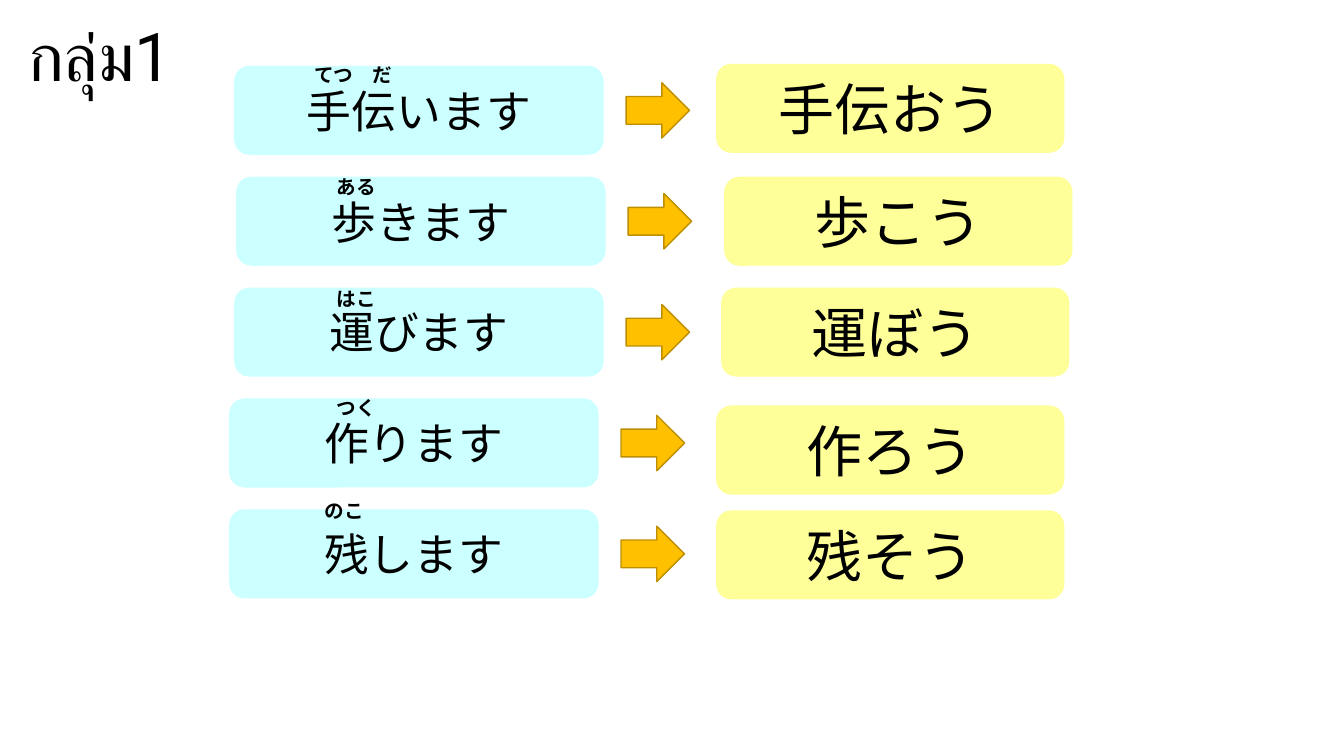
import pptx
import pptx.dml.color
import pptx.enum.shapes
import pptx.enum.text
import pptx.util

Inches = pptx.util.Inches
Pt = pptx.util.Pt
MSO_SHAPE = pptx.enum.shapes.MSO_SHAPE
PP_ALIGN = pptx.enum.text.PP_ALIGN
MSO_ANCHOR = pptx.enum.text.MSO_ANCHOR

BLUE, YELLOW = "CCFFFF", "FFFF99"
ORANGE, BROWN, BLACK = "FFC000", "BD8E00", "000000"

ROW_TOP, ROW_PITCH = 0.66, 1.1
CARD_H = 0.87
POLITE_W, VOLITIONAL_W = 3.65, 3.44
ARROW_DX, ARROW_DY = 3.88, 0.16

# polite form, its left; volitional form, its left and top; reading, its left and top
VERBS = [
    ("手伝います", 2.33, "手伝おう", 7.11, 0.64, "てつ　だ", 3.02, 0.58),
    ("歩きます", 2.35, "歩こう", 7.19, 1.76, "ある", 3.24, 1.69),
    ("運びます", 2.33, "運ぼう", 7.16, 2.86, "はこ", 3.24, 2.80),
    ("作ります", 2.28, "作ろう", 7.11, 4.03, "つく", 3.24, 3.88),
    ("残します", 2.28, "残そう", 7.11, 5.07, "のこ", 3.12, 4.90),
]


def rgb(value):
    return pptx.dml.color.RGBColor.from_string(value)


class VerbSlide:
    """Draws the cards, arrows and labels of one slide."""

    def __init__(self, prs):
        self.s = prs.slides.add_slide(prs.slide_layouts[6])

    def add_text(self, tf, text, size, font, bold=False):
        tf.word_wrap = True
        p = tf.paragraphs[0]
        r = p.add_run()
        r.text = text
        r.font.size = Pt(size)
        r.font.name = font
        r.font.bold = bold
        r.font.color.rgb = rgb(BLACK)
        return p

    def shape(self, kind, x, y, w, h, fill, line):
        sp = self.s.shapes.add_shape(kind, Inches(x), Inches(y), Inches(w), Inches(h))
        sp.shadow.inherit = False
        sp.fill.solid()
        sp.fill.fore_color.rgb = rgb(fill)
        sp.line.color.rgb = rgb(line)
        sp.line.width = Pt(1)
        return sp

    def card(self, text, x, y, w, color, size):
        sp = self.shape(MSO_SHAPE.ROUNDED_RECTANGLE, x, y, w, CARD_H, color, color)
        tf = sp.text_frame
        tf.vertical_anchor = MSO_ANCHOR.MIDDLE
        self.add_text(tf, text, size, "Lato").alignment = PP_ALIGN.CENTER

    def arrow(self, x, y):
        self.shape(MSO_SHAPE.RIGHT_ARROW, x, y, 0.63, 0.55, ORANGE, BROWN)

    def label(self, text, x, y, w, h, size, font, bold=False):
        sp = self.s.shapes.add_textbox(Inches(x), Inches(y), Inches(w), Inches(h))
        self.add_text(sp.text_frame, text, size, font, bold)


def main():
    prs = pptx.Presentation()
    prs.slide_width = Inches(13.33)
    prs.slide_height = Inches(7.5)
    slide = VerbSlide(prs)

    slide.label("กลุ่ม1", 0.18, 0.09, 3.29, 0.91, 48, "Roboto")
    for i, (polite, x, volitional, vx, vy, reading, rx, ry) in enumerate(VERBS):
        y = ROW_TOP + i * ROW_PITCH
        slide.card(polite, x, y, POLITE_W, BLUE, 32)
        slide.arrow(x + ARROW_DX, y + ARROW_DY)
        slide.card(volitional, vx, vy, VOLITIONAL_W, YELLOW, 40)
        slide.label(reading, rx, ry, 1.73, 0.34, 14, "Arial", bold=True)

    prs.save("out.pptx")


if __name__ == "__main__":
    main()
